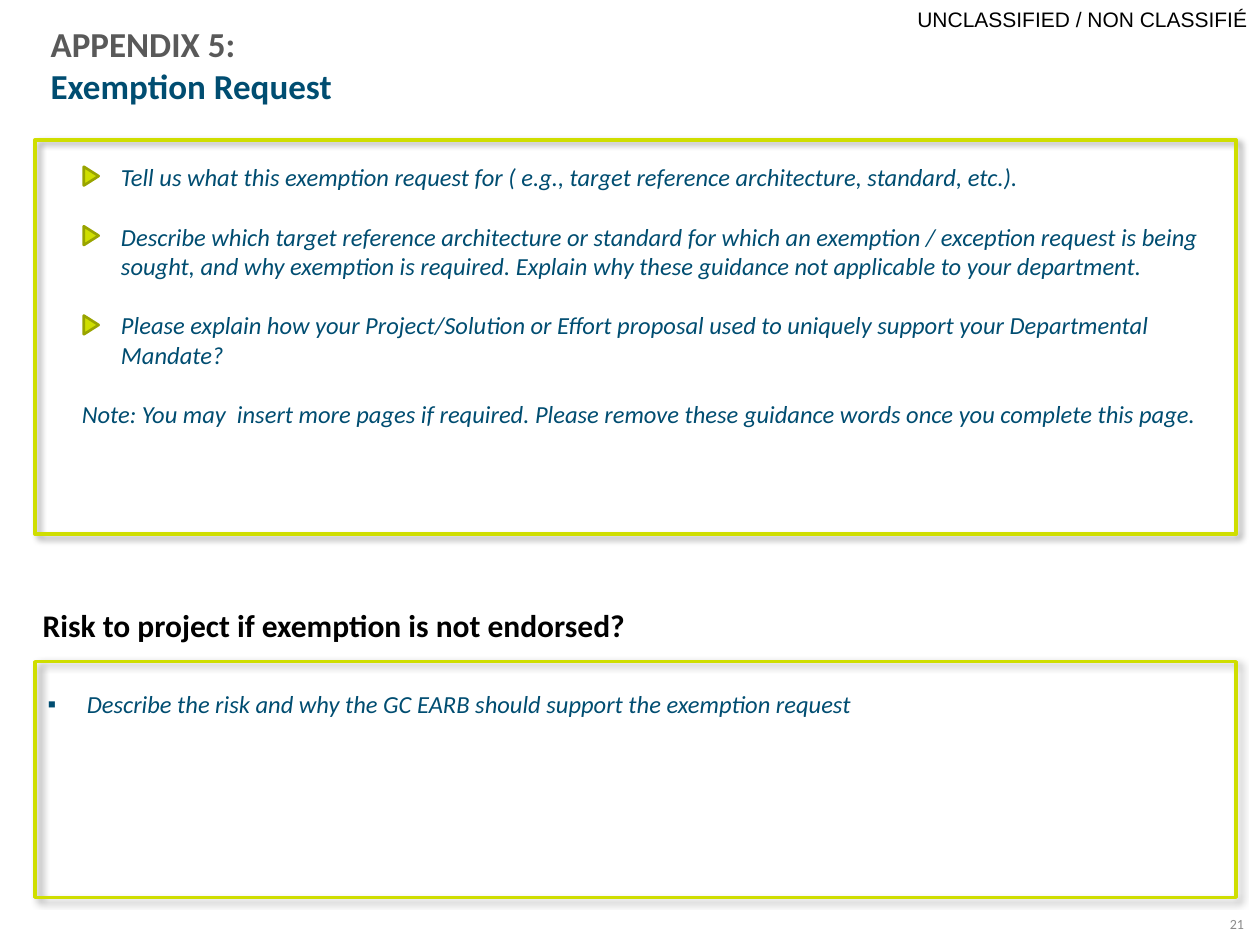
from dataclasses import dataclass

from lxml import etree
from pptx import Presentation
from pptx.dml.color import RGBColor
from pptx.enum.shapes import MSO_SHAPE
from pptx.enum.text import MSO_ANCHOR, PP_ALIGN
from pptx.oxml import parse_xml
from pptx.oxml.ns import nsdecls, qn
from pptx.util import Cm, Pt

RECT = MSO_SHAPE.RECTANGLE
MERGE = MSO_SHAPE.FLOWCHART_MERGE
MIDDLE = MSO_ANCHOR.MIDDLE
RIGHT = PP_ALIGN.RIGHT


@dataclass(frozen=True)
class Theme:
    """Colours, fonts and type sizes of the slide."""
    ink: str = "000000"
    navy: str = "004D71"
    grey: str = "595959"
    pale: str = "8C8C8C"
    lime: str = "CFDE00"
    olive: str = "99A400"
    body: str = "Calibri"
    label: str = "Arial"
    title: int = 20
    head: int = 18
    text: int = 14
    mark: int = 12
    small: int = 8


THEME = Theme()
NOTE = {"size": THEME.text, "color": THEME.navy, "italic": True}
STEP = 0.6
INDENT = 0.79

ASKS = [
    "Tell us what this exemption request for ( e.g., target reference architecture, standard, etc.).",
    "Describe which target reference architecture or standard for which an exemption / exception "
    "request is being sought, and why exemption is required. Explain why these guidance not "
    "applicable to your department.",
    "Please explain how your Project/Solution or Effort proposal used to uniquely support your "
    "Departmental Mandate?",
]
ROWS = [0, 2, 5]
HINT = ("Note: You may  insert more pages if required. Please remove these guidance words "
        "once you complete this page.")


def style(font, size, color, name=THEME.body, **form):
    """Apply type values to a font."""
    font.color.rgb = RGBColor.from_string(color)
    for key, value in {"size": Pt(size), "name": name, **form}.items():
        setattr(font, key, value)


def field(slide, box, **form):
    """Add a wrapping text box and return its frame."""
    frame = slide.shapes.add_textbox(*map(Cm, box)).text_frame
    for key, value in {"word_wrap": True, **form}.items():
        setattr(frame, key, value)
    return frame


def line(frame, text, align=None, **form):
    """Fill the first paragraph of a frame."""
    para = frame.paragraphs[0]
    para.alignment = align
    run = para.add_run()
    run.text = text
    style(run.font, **form)
    return para


def hang(para, sign=None):
    """Indent a paragraph, hanging its bullet sign if it has one."""
    props = para._p.get_or_add_pPr()
    props.set("marL", str(Cm(INDENT)))
    if sign:
        props.set("indent", str(-Cm(INDENT)))
        etree.SubElement(props, qn("a:buFont")).set("typeface", THEME.label)
        etree.SubElement(props, qn("a:buChar")).set("char", sign)


def shape(slide, kind, box, edge, width, fill=None):
    """Add a preset shape with an outline and an optional fill."""
    item = slide.shapes.add_shape(kind, *map(Cm, box))
    item.shadow.inherit = False
    item.line.color.rgb = RGBColor.from_string(edge)
    item.line.width = Pt(width)
    if fill:
        item.fill.solid()
        item.fill.fore_color.rgb = RGBColor.from_string(fill)
    else:
        item.fill.background()
    return item


def panel(slide, box):
    """Add a lime frame with a soft shadow."""
    props = shape(slide, RECT, box, THEME.lime, 2)._element.spPr
    props.find(qn("a:effectLst")).append(parse_xml(
        f'<a:outerShdw {nsdecls("a")} blurRad="{Pt(4)}" dist="{Pt(3)}" dir="2700000" '
        f'algn="tl" rotWithShape="0"><a:srgbClr val="{THEME.ink}">'
        '<a:alpha val="40000"/></a:srgbClr></a:outerShdw>'))


def banner(slide, box):
    """Place the security marking."""
    line(field(slide, box), "UNCLASSIFIED / NON CLASSIFIÉ", RIGHT,
         size=THEME.mark, color=THEME.ink, name=THEME.label)


def header(slide, box):
    """Place the two-line title."""
    edges = dict.fromkeys(
        ("margin_left", "margin_top", "margin_right", "margin_bottom"), 0)
    frame = field(slide, box, vertical_anchor=MIDDLE, **edges)
    form = {"size": THEME.title, "bold": True}
    line(frame, "APPENDIX 5:", color=THEME.grey, **form).add_line_break()
    line(frame, "Exemption Request", color=THEME.navy, **form)


def guide(slide, box):
    """Place the framed guidance with its arrow markers."""
    left, top, width, _ = box
    panel(slide, box)
    frame = field(slide, (left + 0.69, top + 0.33, width - 0.71, 6.83))
    for num, text in enumerate([*ASKS, HINT]):
        para = frame.add_paragraph() if num else frame.paragraphs[0]
        if num:
            para.space_before = Pt(17)
        if text != HINT:
            hang(para)
        run = para.add_run()
        run.text = text
        style(run.font, **NOTE)
    for row in ROWS:
        spot = (left + 0.94, top + 0.58 + row * STEP, 0.38, 0.3)
        shape(slide, MERGE, spot, THEME.olive, 1.5, THEME.lime).rotation = 270


def risk(slide, box):
    """Place the risk heading and its framed answer."""
    left, top, width, height = box
    line(field(slide, (left - 0.1, top, 15.9, 1.02)),
         "Risk to project if exemption is not endorsed?",
         size=THEME.head, color=THEME.ink, bold=True)
    panel(slide, (left, top + 1.25, width, height - 1.25))
    para = line(field(slide, (left, top + 1.68, width - 0.71, 1.45)),
                "Describe the risk and why the GC EARB should support the exemption request",
                **NOTE)
    hang(para, "▪")


def footer(slide, box):
    """Place the page number."""
    line(field(slide, box, vertical_anchor=MIDDLE), "21", RIGHT,
         size=THEME.small, color=THEME.pale)


def main():
    """Build the slide and save it."""
    deck = Presentation()
    deck.slide_width, deck.slide_height = Cm(25.4), Cm(19.05)
    slide = deck.slides.add_slide(deck.slide_layouts[6])
    banner(slide, (0, 0, 25.4, 0.76))
    header(slide, (1.02, 0.23, 15.09, 2.13))
    guide(slide, (0.71, 2.82, 24.21, 7.95))
    risk(slide, (0.71, 12.09, 24.21, 6))
    footer(slide, (24.49, 18.11, 0.84, 1.02))
    deck.save("out.pptx")


if __name__ == "__main__":
    main()
